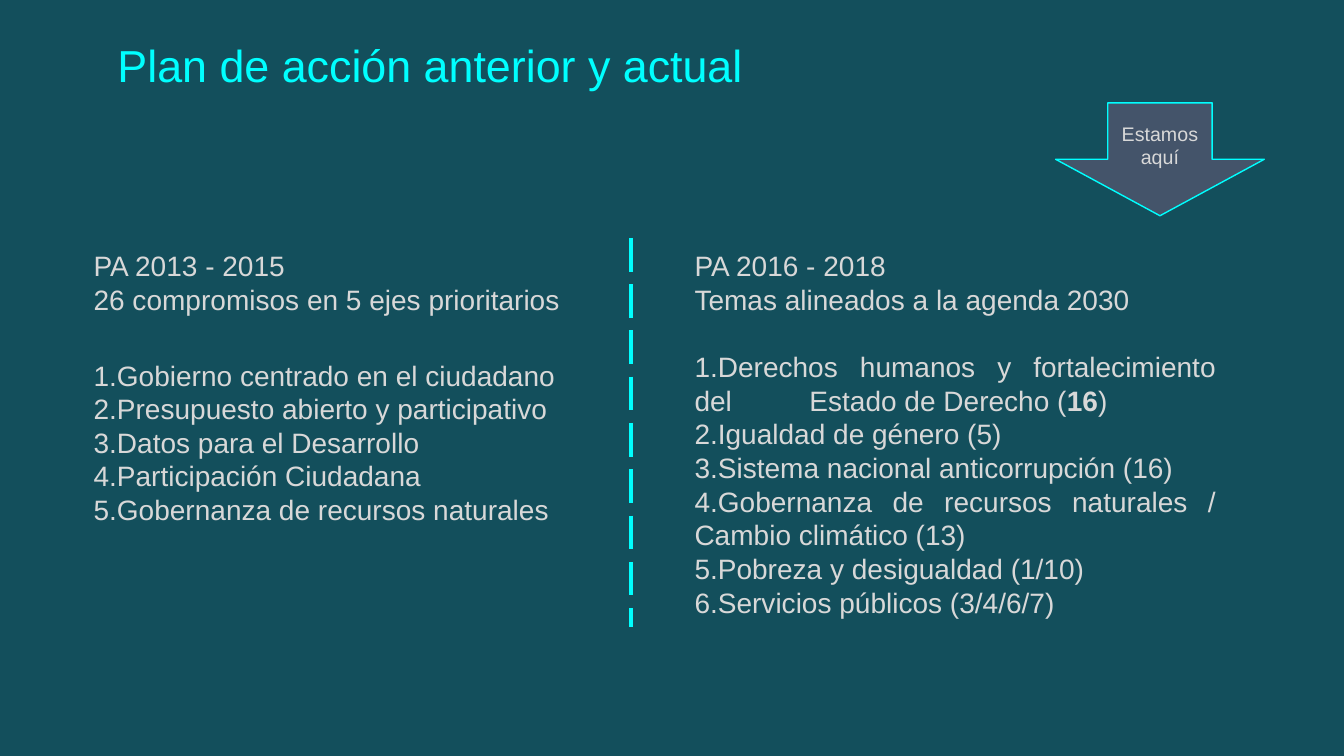
from dataclasses import dataclass

from lxml import etree
from pptx import Presentation
from pptx.dml.color import RGBColor
from pptx.enum.dml import MSO_LINE
from pptx.enum.shapes import MSO_CONNECTOR, MSO_SHAPE
from pptx.enum.text import MSO_ANCHOR, PP_ALIGN
from pptx.oxml.ns import qn
from pptx.util import Inches, Pt

CENTER, LEFT, JUSTIFY = PP_ALIGN.CENTER, PP_ALIGN.LEFT, PP_ALIGN.JUSTIFY
MIDDLE = MSO_ANCHOR.MIDDLE
LONG_DASH = MSO_LINE.LONG_DASH
STRAIGHT = MSO_CONNECTOR.STRAIGHT
DOWN_ARROW = MSO_SHAPE.DOWN_ARROW


@dataclass(frozen=True)
class Theme:
    font: str = "Arial"
    background: RGBColor = RGBColor(0x13, 0x4F, 0x5C)
    accent: RGBColor = RGBColor(0x00, 0xFF, 0xFF)
    text: RGBColor = RGBColor(0xD8, 0xD8, 0xD8)
    arrow: RGBColor = RGBColor(0x44, 0x54, 0x6A)
    title_size: int = 32
    body_size: int = 20
    label_size: int = 14


THEME = Theme()

PREVIOUS_PLAN = [
    "Gobierno centrado en el ciudadano",
    "Presupuesto abierto y participativo",
    "Datos para el Desarrollo",
    "Participación Ciudadana",
    "Gobernanza de recursos naturales",
]
CURRENT_PLAN = [
    ("Derechos humanos y fortalecimiento del\tEstado de Derecho (", "16", ")"),
    "Igualdad de género (5)",
    "Sistema nacional anticorrupción (16)",
    "Gobernanza de recursos naturales / Cambio climático (13)",
    "Pobreza y desigualdad (1/10)",
    "Servicios públicos (3/4/6/7)",
]


def format_runs(p, size, color, align):
    p.alignment = align
    for r in p.runs:
        r.font.name = THEME.font
        r.font.size = Pt(size)
        r.font.color.rgb = color


def number_item(p):
    pPr = p._p.get_or_add_pPr()
    pPr.set("marL", "0")
    pPr.set("indent", str(Inches(-0.01)))
    bullet_color = etree.SubElement(pPr, qn("a:buClr"))
    etree.SubElement(bullet_color, qn("a:srgbClr"), val=str(THEME.text))
    etree.SubElement(pPr, qn("a:buFont"), typeface=THEME.font)
    etree.SubElement(pPr, qn("a:buAutoNum"), type="arabicPeriod")


def add_tab_stop(p, position):
    tabs = etree.SubElement(p._p.get_or_add_pPr(), qn("a:tabLst"))
    etree.SubElement(tabs, qn("a:tab"), pos=str(position), algn="l")


def add_text_box(slide, box):
    tf = slide.shapes.add_textbox(*map(Inches, box)).text_frame
    tf.word_wrap = True
    return tf


def add_title(slide, box, title):
    tf = add_text_box(slide, box)
    tf.text = title
    format_runs(tf.paragraphs[0], THEME.title_size, THEME.accent, CENTER)


def add_plan(slide, box, headings, items, align, gap):
    tf = add_text_box(slide, box)
    tf.text = "\n".join(headings)
    for p in tf.paragraphs:
        format_runs(p, THEME.body_size, THEME.text, LEFT)
    for i, item in enumerate(items):
        p = tf.add_paragraph()
        if isinstance(item, str):
            p.text = item
        else:
            for part in item:
                p.add_run().text = part
            p.runs[1].font.bold = True
        format_runs(p, THEME.body_size, THEME.text, align)
        if i == 0:
            p.space_before = Pt(gap)
        number_item(p)
        if "\t" in p.text:
            add_tab_stop(p, Inches(1.14))


def add_divider(slide, box):
    left, top, width, height = box
    line = slide.shapes.add_connector(
        STRAIGHT, Inches(left), Inches(top), Inches(left + width), Inches(top + height))
    line.line.color.rgb = THEME.accent
    line.line.width = Pt(3)
    line.line.dash_style = LONG_DASH
    etree.SubElement(line._element.spPr, qn("a:effectLst"))


def add_here_arrow(slide, box, label):
    sp = slide.shapes.add_shape(DOWN_ARROW, *map(Inches, box))
    sp.shadow.inherit = False
    sp.fill.solid()
    sp.fill.fore_color.rgb = THEME.arrow
    sp.line.color.rgb = THEME.accent
    sp.line.width = Pt(1)
    tf = sp.text_frame
    tf.word_wrap = True
    tf.vertical_anchor = MIDDLE
    tf.text = label
    for p in tf.paragraphs:
        format_runs(p, THEME.label_size, THEME.text, CENTER)


def build_plan_slide(prs):
    slide = prs.slides.add_slide(prs.slide_layouts[6])
    slide.background.fill.solid()
    slide.background.fill.fore_color.rgb = THEME.background
    add_title(slide, (0.83, 0.32, 6.88, 0.71), "Plan de acción anterior y actual")
    add_plan(slide, (0.83, 2.42, 5.2, 3.93),
             ("PA 2013 - 2015", "26 compromisos en 5 ejes prioritarios"),
             PREVIOUS_PLAN, LEFT, 30)
    add_divider(slide, (6.26, 2.36, 0, 3.86))
    add_plan(slide, (6.79, 2.42, 5.37, 3.74),
             ("PA 2016 - 2018", "Temas alineados a la agenda 2030"),
             CURRENT_PLAN, JUSTIFY, 24)
    add_here_arrow(slide, (10.47, 1.02, 2.07, 1.12), "Estamos\naquí")


def main():
    prs = Presentation()
    prs.slide_width, prs.slide_height = Inches(13.33), Inches(7.5)
    build_plan_slide(prs)
    prs.save("out.pptx")


if __name__ == "__main__":
    main()
